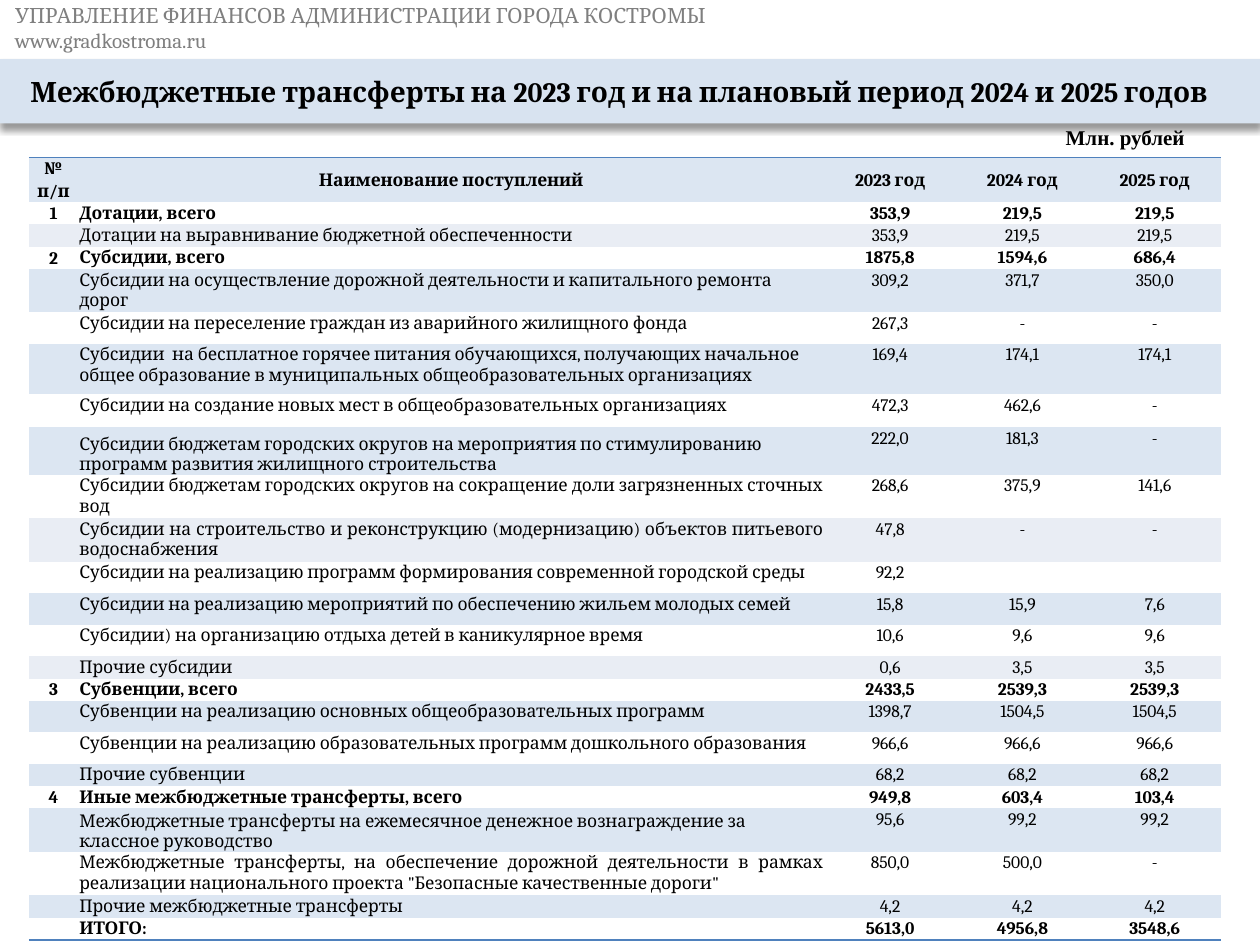
from lxml import etree
from pptx import Presentation
from pptx.dml.color import RGBColor
from pptx.enum.text import MSO_ANCHOR, MSO_AUTO_SIZE, PP_ALIGN
from pptx.oxml.ns import qn
from pptx.util import Inches, Pt

LEFT, CENTER, JUSTIFY = PP_ALIGN.LEFT, PP_ALIGN.CENTER, PP_ALIGN.JUSTIFY
TOP, MIDDLE, BOTTOM = MSO_ANCHOR.TOP, MSO_ANCHOR.MIDDLE, MSO_ANCHOR.BOTTOM
NO_AUTOFIT = MSO_AUTO_SIZE.NONE
BLACK = RGBColor(0x00, 0x00, 0x00)
GRAY = RGBColor(0x7F, 0x7F, 0x7F)
BAND = RGBColor(0xD8, 0xE3, 0xF0)
BLUE = RGBColor(0xDC, 0xE6, 0xF2)
STEEL = RGBColor(0xDB, 0xE5, 0xF1)
PALE = RGBColor(0xE9, 0xED, 0xF4)
RULE = RGBColor(0x4F, 0x81, 0xBD)
NO_STYLE = "{2D5ABB26-0587-4C30-8999-92F81FD0307C}"

COLUMNS = [0.39, 5.92, 1.05, 1.05, 1.05]
HEADINGS = ["№", "Наименование поступлений", "2023 год", "2024 год", "2025 год"]
ROWS = [
    ("1", "Дотации, всего", "353,9 219,5 219,5", None, 0.15, LEFT, TOP),
    ("", "Дотации на выравнивание бюджетной обеспеченности", "353,9 219,5 219,5", PALE, 0.15, JUSTIFY, TOP),
    ("2", "Субсидии, всего", "1875,8 1594,6 686,4", None, 0.15, LEFT, TOP),
    ("", "Субсидии на осуществление дорожной деятельности и капитального ремонта дорог",
     "309,2 371,7 350,0", BLUE, 0.25, LEFT, TOP),
    ("", "Субсидии на переселение граждан из аварийного жилищного фонда", "267,3 - -", None, 0.25, LEFT, TOP),
    ("", "Субсидии  на бесплатное горячее питания обучающихся, получающих начальное общее образование "
     "в муниципальных общеобразовательных организациях", "169,4 174,1 174,1", BLUE, 0.4, LEFT, TOP),
    ("", "Субсидии на создание новых мест в общеобразовательных организациях",
     "472,3 462,6 -", None, 0.26, JUSTIFY, TOP),
    ("", "Субсидии бюджетам городских округов на мероприятия по стимулированию программ развития "
     "жилищного строительства", "222,0 181,3 -", BLUE, 0.38, LEFT, BOTTOM),
    ("", "Субсидии бюджетам городских округов на сокращение доли загрязненных сточных вод",
     "268,6 375,9 141,6", None, 0.25, JUSTIFY, TOP),
    ("", "Субсидии на строительство и реконструкцию (модернизацию) объектов питьевого водоснабжения",
     "47,8 - -", PALE, 0.25, JUSTIFY, TOP),
    ("", "Субсидии на реализацию программ формирования современной городской среды",
     "92,2", None, 0.25, JUSTIFY, TOP),
    ("", "Субсидии на реализацию мероприятий по обеспечению жильем молодых семей",
     "15,8 15,9 7,6", BLUE, 0.25, JUSTIFY, TOP),
    ("", "Субсидии) на организацию отдыха детей в каникулярное время", "10,6 9,6 9,6", None, 0.25, JUSTIFY, TOP),
    ("", "Прочие субсидии", "0,6 3,5 3,5", PALE, 0.15, LEFT, TOP),
    ("3", "Субвенции, всего", "2433,5 2539,3 2539,3", None, 0.15, LEFT, TOP),
    ("", "Субвенции на реализацию основных общеобразовательных программ",
     "1398,7 1504,5 1504,5", STEEL, 0.25, JUSTIFY, TOP),
    ("", "Субвенции на реализацию образовательных программ дошкольного образования",
     "966,6 966,6 966,6", None, 0.25, JUSTIFY, TOP),
    ("", "Прочие субвенции", "68,2 68,2 68,2", STEEL, 0.15, JUSTIFY, TOP),
    ("4", "Иные межбюджетные трансферты, всего", "949,8 603,4 103,4", None, 0.15, LEFT, TOP),
    ("", "Межбюджетные трансферты на ежемесячное денежное вознаграждение за классное руководство",
     "95,6 99,2 99,2", BLUE, 0.26, LEFT, BOTTOM),
    ("", "Межбюджетные трансферты, на обеспечение дорожной деятельности в рамках реализации "
     "национального проекта \"Безопасные качественные дороги\"", "850,0 500,0 -", None, 0.34, JUSTIFY, TOP),
    ("", "Прочие межбюджетные трансферты", "4,2 4,2 4,2", BLUE, 0.15, JUSTIFY, TOP),
    ("", "ИТОГО:", "5613,0 4956,8 3548,6", None, 0.16, LEFT, MIDDLE),
]


def add_span(para, text, size, color, bold, font="Cambria"):
    span = para.add_run()
    span.text = text
    span.font.name = font
    span.font.size = Pt(size)
    span.font.bold = bold
    span.font.color.rgb = color


def fill_cell(cell, text, fill, align, anchor, bold):
    cell.margin_left = cell.margin_right = cell.margin_top = Inches(0.01)
    cell.margin_bottom = 0
    cell.vertical_anchor = anchor
    if fill is None:
        cell.fill.background()
    else:
        cell.fill.solid()
        cell.fill.fore_color.rgb = fill
    para = cell.text_frame.paragraphs[0]
    para.alignment = align
    if text:
        add_span(para, text, 10, BLACK, bold)
    else:
        etree.SubElement(para._p, qn("a:endParaRPr"), sz="1000")


deck = Presentation()
deck.slide_width, deck.slide_height = Inches(10), Inches(7.5)
page = deck.slides.add_slide(deck.slide_layouts[5])

title = page.shapes.title
title.left, title.top, title.width, title.height = 0, Inches(0.47), deck.slide_width, Inches(0.51)
title.fill.solid()
title.fill.fore_color.rgb = BAND
effects = etree.SubElement(title._element.spPr, qn("a:effectLst"))
shadow = etree.SubElement(effects, qn("a:outerShdw"), blurRad=str(Pt(4)), dist=str(Pt(3)),
                          dir="5400000", rotWithShape="0")
shade = etree.SubElement(shadow, qn("a:srgbClr"), val="000000")
etree.SubElement(shade, qn("a:alpha"), val="40000")
frame = title.text_frame
frame.auto_size = NO_AUTOFIT
frame.word_wrap = True
frame.vertical_anchor = MIDDLE
frame.margin_left = frame.margin_right = Inches(0.24)
frame.margin_top = frame.margin_bottom = Inches(0.12)
frame.paragraphs[0].alignment = LEFT
add_span(frame.paragraphs[0], "Межбюджетные трансферты на 2023 год и на плановый период 2024 и 2025 годов",
         16, BLACK, True)

header = page.shapes.add_textbox(0, 0, deck.slide_width, Inches(0.44))
frame = header.text_frame
frame.word_wrap = True
frame.vertical_anchor = MIDDLE
frame.margin_left = frame.margin_right = frame.margin_top = frame.margin_bottom = Inches(0.12)
para = frame.paragraphs[0]
add_span(para, "УПРАВЛЕНИЕ ФИНАНСОВ АДМИНИСТРАЦИИ ГОРОДА КОСТРОМЫ", 12, GRAY, False)
para.add_line_break()
add_span(para, "www.gradkostroma.ru", 12, GRAY, False)

units = page.shapes.add_textbox(Inches(8.36), Inches(0.94), Inches(1.37), Inches(0.3))
units.text_frame.word_wrap = True
add_span(units.text_frame.paragraphs[0], "Млн. рублей", 12, BLACK, True, "Times New Roman")

holder = page.shapes.add_table(len(ROWS) + 2, len(COLUMNS), Inches(0.23), Inches(1.25),
                               Inches(sum(COLUMNS)), Inches(5.98))
table = holder.table
table.first_row = table.horz_banding = False
table._tbl.tblPr.find(qn("a:tableStyleId")).text = NO_STYLE
for column, width in zip(table.columns, COLUMNS):
    column.width = Inches(width)
for row, height in zip(table.rows, [0.15, 0.15] + [entry[4] for entry in ROWS]):
    row.height = Inches(height)

for index, heading in enumerate(HEADINGS):
    fill_cell(table.cell(0, index), heading, BLUE, CENTER, MIDDLE, True)
    fill_cell(table.cell(1, index), "" if index else "п/п", BLUE, CENTER, MIDDLE, True)
    if index:
        table.cell(0, index).merge(table.cell(1, index))

for line, (number, name, values, fill, height, align, anchor) in enumerate(ROWS, 2):
    bold = bool(number) or name == "ИТОГО:"
    fill_cell(table.cell(line, 0), number, fill, CENTER, MIDDLE, bold)
    fill_cell(table.cell(line, 1), name, fill, align, anchor, bold)
    amounts = (values.split() + ["", ""])[:3]
    for index, amount in enumerate(amounts, 2):
        fill_cell(table.cell(line, index), amount, fill, CENTER, TOP, bold)

for line, side in ((0, "a:lnT"), (len(ROWS) + 1, "a:lnB")):
    for cell in table.rows[line].cells:
        border = etree.Element(qn(side), w=str(Pt(1)))
        paint = etree.SubElement(border, qn("a:solidFill"))
        etree.SubElement(paint, qn("a:srgbClr"), val=str(RULE))
        cell._tc.get_or_add_tcPr().insert(0, border)

deck.save("out.pptx")
